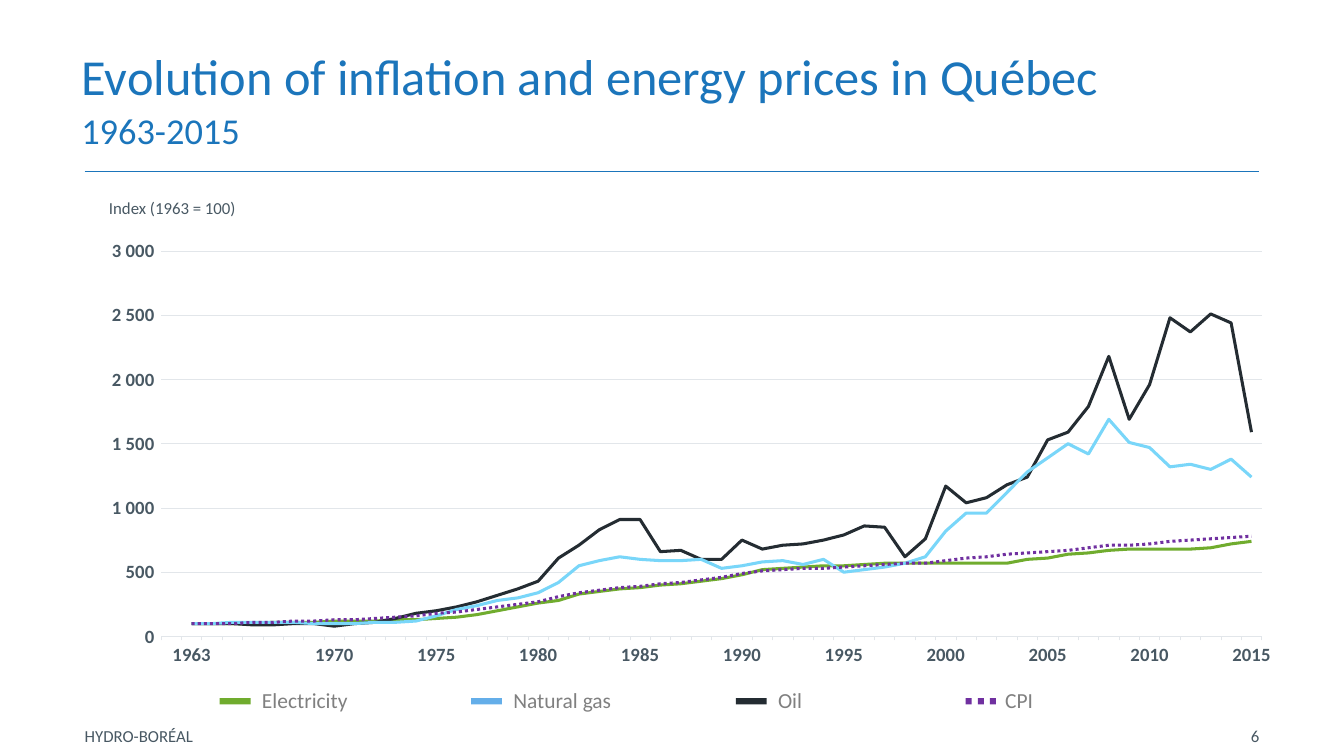
from dataclasses import dataclass
from lxml import etree
from pptx import Presentation
from pptx.chart.data import CategoryChartData as Data
from pptx.dml.color import RGBColor as Rgb
from pptx.enum.chart import XL_CHART_TYPE as Kind, XL_TICK_MARK as Tick
from pptx.enum.dml import MSO_LINE as Dash
from pptx.enum.shapes import MSO_CONNECTOR as Conn, MSO_SHAPE as Shape
from pptx.enum.text import MSO_ANCHOR as Anchor, MSO_AUTO_SIZE as Fit, PP_ALIGN as Align
from pptx.oxml.ns import qn
from pptx.util import Pt

SCALE = 9144  # EMU in one px, 100 px to the inch


@dataclass(frozen=True)
class Theme:
    font: str = "Calibri"
    blue: str = "1B75BB"
    slate: str = "485863"
    grey: str = "808080"
    grid: str = "E2E6EA"
    green: str = "70AC2E"
    sky: str = "79D6F9"
    gas: str = "64AEE9"
    dark: str = "242C32"
    purple: str = "7030A0"
    title: int = 54
    sub: int = 39
    key: int = 23
    axis: int = 20
    note: int = 18
    base: int = 10


T = Theme()

# Index values by year, 1963 to 2015
POWER = [100, 100, 100, 100, 110, 110, 110, 120, 120, 120, 130, 130, 140, 150, 170, 200, 230, 260,
         280, 330, 350, 370, 380, 400, 410, 430, 450, 480, 520, 530, 540, 550, 550, 560, 570, 570,
         570, 570, 570, 570, 570, 600, 610, 640, 650, 670, 680, 680, 680, 680, 690, 720, 740]
OIL = [100, 100, 100, 90, 90, 100, 100, 80, 100, 110, 140, 180, 200, 230, 270, 320, 370, 430,
       610, 710, 830, 910, 910, 660, 670, 600, 600, 750, 680, 710, 720, 750, 790, 860, 850, 620,
       760, 1170, 1040, 1080, 1180, 1240, 1530, 1590, 1790, 2180, 1690, 1960, 2480, 2370, 2510,
       2440, 1590]
GAS = [100, 100, 110, 110, 110, 110, 100, 100, 100, 110, 110, 120, 160, 210, 240, 280, 300, 340,
       420, 550, 590, 620, 600, 590, 590, 600, 530, 550, 580, 590, 560, 600, 500, 520, 540, 570,
       620, 820, 960, 960, 1120, 1280, 1390, 1500, 1420, 1690, 1510, 1470, 1320, 1340, 1300,
       1380, 1240]
CPI = [100, 100, 100, 110, 110, 120, 120, 130, 130, 140, 150, 160, 180, 190, 210, 230, 250, 270,
       310, 340, 360, 380, 390, 410, 420, 440, 460, 490, 510, 520, 530, 530, 540, 550, 560, 570,
       570, 590, 610, 620, 640, 650, 660, 670, 690, 710, 710, 720, 740, 750, 760, 770, 780]
LINES = [("Electricity", POWER, T.green), ("Oil", OIL, T.dark),
         ("Natural gas", GAS, T.sky), ("CPI", CPI, T.purple)]


def px(*nums):
    return [n * SCALE for n in nums]


def apply(obj, form):
    for name, val in form.items():
        setattr(obj, name, val)


def ink(font, size, color, bold=False):
    apply(font, {"name": T.font, "size": Pt(size), "bold": bold})
    font.color.rgb = Rgb.from_string(color)


def stroke(line, color, width):
    line.color.rgb = Rgb.from_string(color)
    line.width = Pt(width)


def text(shapes, box, runs, color, pads=(10, 5, 10, 5), align=Align.LEFT, **form):
    frame = shapes.add_textbox(*px(*box)).text_frame
    sides = ("margin_left", "margin_top", "margin_right", "margin_bottom")
    apply(frame, {"word_wrap": True, **dict(zip(sides, px(*pads))), **form})
    para = frame.paragraphs[0]
    para.alignment = align
    for i, (words, size) in enumerate(runs):
        if i:
            para.add_line_break()
        run = para.add_run()
        run.text = words
        ink(run.font, size, color)
    return para


def header(slide, box):
    x, y, w, h = box
    # Title and period
    para = text(slide.shapes, (x - 17, y, 1567, h - 24),
                [("Evolution of inflation and energy prices in Québec", T.title),
                 ("1963-2015", T.sub)],
                T.blue, (12, 5, 0, 5), vertical_anchor=Anchor.BOTTOM)
    para.line_spacing = Pt(50)
    # Rule below
    rule = slide.shapes.add_connector(Conn.STRAIGHT, *px(x, y + h, x + w, y + h))
    stroke(rule.line, T.blue, 1)
    etree.SubElement(rule._element.spPr, qn("a:effectLst"))


def layout(area, *nums):
    for old in area.findall(qn("c:layout")):
        area.remove(old)
    node = etree.Element(qn("c:layout"))
    area.insert(0, node)
    man = etree.SubElement(node, qn("c:manualLayout"))
    names = ("layoutTarget", "xMode", "yMode", "x", "y", "w", "h")
    for name, val in zip(names, ("inner", "edge", "edge", *nums)):
        etree.SubElement(man, qn("c:" + name), val=str(val))


def after(axis, mark, name, val):
    """Set a child of an axis, placing it right after a given one."""
    node = axis.find(qn("c:" + name))
    if node is None:
        node = etree.Element(qn("c:" + name))
        axis.find(qn("c:" + mark)).addnext(node)
    node.set("val", val)


def graph(slide, box):
    x, y, w, h = box
    text(slide.shapes, (x + 5, y, 261, 40), [("Index (1963 = 100)", T.note)], T.slate,
         align=Align.CENTER, auto_size=Fit.SHAPE_TO_FIT_TEXT)
    # Data, with one empty slot ahead of the first year
    data = Data()
    data.categories = [""] + [str(n) if n == 1963 or n >= 1970 and n % 5 == 0 else ""
                              for n in range(1963, 2016)]
    for name, vals, _ in LINES:
        data.add_series(name, [None] + vals)
    chart = slide.shapes.add_chart(Kind.LINE, *px(x, y + 66, w, h - 66), data).chart
    apply(chart, {"has_legend": False, "has_title": False})
    ink(chart.font, T.base, T.blue)
    # Lines
    for plot, (_, _, color) in zip(chart.plots[0].series, LINES):
        plot.smooth = False
        stroke(plot.format.line, color, 3.25)
    plot.format.line.dash_style = Dash.ROUND_DOT
    # Axes
    years, index = chart.category_axis, chart.value_axis
    for axis in (years, index):
        apply(axis, {"major_tick_mark": Tick.OUTSIDE, "minor_tick_mark": Tick.NONE})
        ink(axis.tick_labels.font, T.axis, T.slate, True)
    stroke(years.format.line, T.grid, 0.75)
    index.format.line.fill.background()
    apply(index, {"minimum_scale": 0, "maximum_scale": 3000, "major_unit": 500,
                  "has_major_gridlines": True})
    stroke(index.major_gridlines.format.line, T.grid, 0.75)
    apply(index.tick_labels, {"number_format": "#\\ ##0", "number_format_is_linked": False})
    after(years._element, "lblOffset", "tickLblSkip", "1")
    after(index._element, "crosses", "crossBetween", "between")
    layout(chart._chartSpace.chart.plotArea, 0.065, 0.028, 0.897, 0.868)


def entry(slide, box, name, color, dots):
    x, y, w, h = box
    group = slide.shapes.add_group_shape().shapes
    text(group, (x + (49 if dots > 1 else 53), y, w, h), [(name, T.key)], T.grey,
         word_wrap=False, auto_size=Fit.SHAPE_TO_FIT_TEXT)
    # Swatch: one bar or a row of dots over the same width
    size = 46 if dots == 1 else 9
    for i in range(dots):
        bar = group.add_shape(Shape.RECTANGLE, *px(x + i * 2 * size, y + 21, size, 9))
        bar.shadow.inherit = False
        bar.fill.solid()
        bar.fill.fore_color.rgb = Rgb.from_string(color)
        bar.line.fill.background()


def legend(slide, box):
    x, y, _, h = box
    for dx, w, name, color, dots in [(0, 149, "Electricity", T.green, 1),
                                     (374, 167, "Natural gas", T.gas, 1),
                                     (768, 56, "Oil", T.dark, 1),
                                     (1110, 62, "CPI", T.purple, 3)]:
        entry(slide, (x + dx, y, w, h), name, color, dots)


def footer(slide, box):
    x, y, w, h = box
    text(slide.shapes, (x, y, 675, h), [("HYDRO-BORÉAL", T.note)], T.slate,
         (0, 5, 10, 5), vertical_anchor=Anchor.MIDDLE)
    text(slide.shapes, (x + w - 92, y, 92, h), [("6", T.note)], T.slate,
         (10, 5, 0, 5), Align.RIGHT, vertical_anchor=Anchor.MIDDLE)


def main():
    deck = Presentation()
    deck.slide_width, deck.slide_height = px(2000, 1125)
    slide = deck.slides.add_slide(deck.slide_layouts[6])
    header(slide, (126, 73, 1748, 182))
    graph(slide, (121, 289, 1826, 727))
    legend(slide, (327, 1018, 1221, 49))
    footer(slide, (126, 1065, 1748, 60))
    deck.save("out.pptx")


if __name__ == "__main__":
    main()
